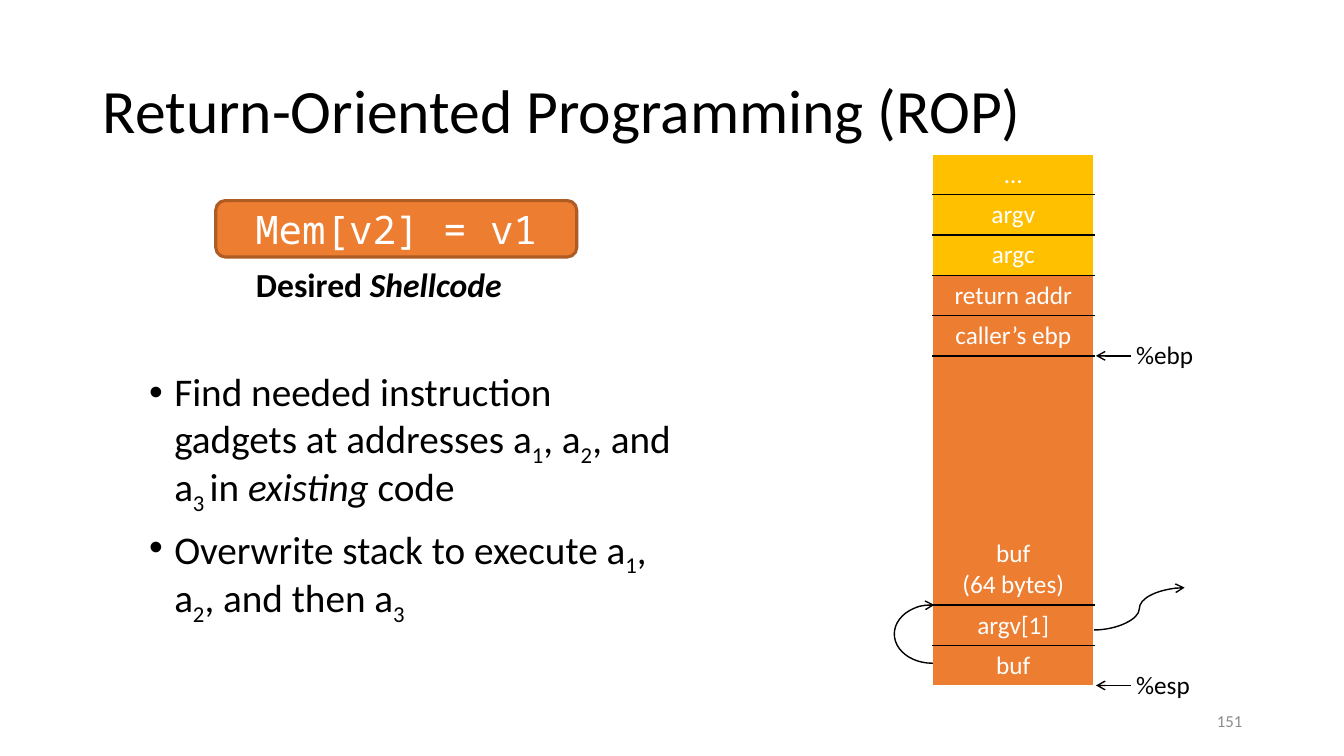
from pptx import Presentation
from pptx import util as u
from pptx.dml.color import RGBColor
from pptx.enum import shapes, text
from pptx.oxml import parse_xml
from pptx.oxml.ns import nsdecls, qn

COLORS = {
    "ink": "000000",
    "paper": "FFFFFF",
    "muted": "8C8C8C",
    "orange": "ED7D31",
    "orange_edge": "AF5C24",
    "gold": "FFC000",
}
SANS = "Calibri"
MONO = "Noto Sans Mono"
ALIGN = text.PP_ALIGN
ANCHOR = text.MSO_ANCHOR


def color(name):
    return RGBColor.from_string(COLORS[name])


def xml(tag, body=""):
    return parse_xml(f"<a:{tag} {nsdecls('a')}{body}")


def add_run(paragraph, words, size, ink="ink", font=SANS, bold=None, style=""):
    run = paragraph.add_run()
    run.text = words
    run.font.name = font
    run.font.size = u.Pt(size)
    run.font.color.rgb = color(ink)
    run.font.bold = bold
    if style == "italic":
        run.font.italic = True
    elif style == "sub":
        run._r.get_or_add_rPr().set("baseline", "-25000")


def add_box(parent, box, anchor=ANCHOR.TOP, wrap=True):
    frame = parent.add_textbox(*map(u.Inches, box)).text_frame
    frame.word_wrap = wrap
    frame.vertical_anchor = anchor
    return frame


def style_arrow(shape):
    shape.line.color.rgb = color("ink")
    shape.line.width = u.Pt(1)
    properties = shape._element.spPr
    properties.find(qn("a:ln")).append(xml("tailEnd", ' type="arrow"/>'))
    if properties.find(qn("a:effectLst")) is None:
        properties.append(xml("effectLst", "/>"))


def add_arrow(parent, kind, start, end):
    style_arrow(parent.add_connector(kind, *map(u.Inches, start + end)))


def add_title(slide, box):
    paragraph = add_box(slide.shapes, box, ANCHOR.MIDDLE).paragraphs[0]
    paragraph.line_spacing = 0.9
    add_run(paragraph, "Return-Oriented Programming (ROP)", 44)


def add_slide_number(slide, box):
    paragraph = add_box(slide.shapes, box, ANCHOR.MIDDLE).paragraphs[0]
    paragraph.alignment = ALIGN.RIGHT
    add_run(paragraph, "151", 12, "muted")


def add_shellcode(slide, box):
    left, top, width, height = box
    shape = slide.shapes.add_shape(
        shapes.MSO_SHAPE.ROUNDED_RECTANGLE, *map(u.Inches, box))
    shape.shadow.inherit = False
    shape.fill.solid()
    shape.fill.fore_color.rgb = color("orange")
    shape.line.color.rgb = color("orange_edge")
    shape.line.width = u.Pt(2.25)
    frame = shape.text_frame
    frame.vertical_anchor = ANCHOR.MIDDLE
    frame.paragraphs[0].alignment = ALIGN.CENTER
    add_run(frame.paragraphs[0], "Mem[v2] = v1", 28, "paper", MONO)

    caption_box = (left + 0.3, top + height + 0.02, 2.98, 0.5)
    caption = add_box(slide.shapes, caption_box, wrap=False).paragraphs[0]
    add_run(caption, "Desired ", 24, bold=True)
    add_run(caption, "Shellcode", 24, bold=True, style="italic")


def add_steps(slide, box):
    steps = [
        [("Find needed instruction gadgets at addresses a", ""), ("1", "sub"),
         (", a", ""), ("2", "sub"), (", and a", ""), ("3 ", "sub"),
         ("in ", ""), ("existing", "italic"), (" code", "")],
        [("Overwrite stack to execute a", ""), ("1", "sub"), (", a", ""),
         ("2", "sub"), (", and then a", ""), ("3", "sub")],
    ]
    frame = add_box(slide.shapes, box)
    for index, step in enumerate(steps):
        paragraph = frame.add_paragraph() if index else frame.paragraphs[0]
        properties = paragraph._p.get_or_add_pPr()
        properties.set("marL", str(u.Inches(0.25)))
        properties.set("indent", str(-u.Inches(0.25)))
        properties.append(xml("buFont", ' typeface="Arial"/>'))
        properties.append(xml("buChar", ' char="•"/>'))
        paragraph.line_spacing = 0.9
        if index:
            paragraph.space_before = u.Pt(10)
        for words, style in step:
            add_run(paragraph, words, 28, style=style)


def add_border(cell, side):
    line = xml(side, f' w="{u.Pt(1)}"><a:solidFill><a:srgbClr val="{COLORS["ink"]}"/>'
                     f'</a:solidFill></a:{side}>')
    cell._tc.get_or_add_tcPr().append(line)


def add_register(slide, label, left, middle):
    group = slide.shapes.add_group_shape().shapes
    frame = add_box(group, (left + 0.32, middle - 0.21, 0.82, 0.4), wrap=False)
    add_run(frame.paragraphs[0], label, 18)
    add_arrow(group, shapes.MSO_CONNECTOR.STRAIGHT,
              (left + 0.37, middle), (left + 0.02, middle))


def add_stack(slide, box):
    left, top, width, height = box
    right, bottom = left + width, top + height
    entries = ["…", "argv", "argc", "return addr", "caller’s ebp",
               "buf\n(64 bytes)", "argv[1]", "buf"]
    row_height, buffer_row = 0.4, 5
    buffer_height = height - row_height * (len(entries) - 1)
    table = slide.shapes.add_table(len(entries), 1, *map(u.Inches, box)).table
    table.first_row = table.horz_banding = False
    for index, entry in enumerate(entries):
        is_buffer = index == buffer_row
        table.rows[index].height = u.Inches(buffer_height if is_buffer else row_height)
        cell = table.cell(index, 0)
        if index:
            add_border(cell, "lnT")
        if index < len(entries) - 1:
            add_border(cell, "lnB")
        cell.fill.solid()
        cell.fill.fore_color.rgb = color("gold" if index < 3 else "orange")
        cell.vertical_anchor = ANCHOR.BOTTOM if is_buffer else ANCHOR.TOP
        for number, words in enumerate(entry.split("\n")):
            frame = cell.text_frame
            paragraph = frame.add_paragraph() if number else frame.paragraphs[0]
            paragraph.alignment = ALIGN.CENTER
            add_run(paragraph, words, 18, "paper")

    add_register(slide, "%ebp", right, top + buffer_row * row_height)
    add_register(slide, "%esp", right, bottom)

    loop = slide.shapes.add_shape(
        shapes.MSO_SHAPE.ARC,
        *map(u.Inches, (left - 0.38, bottom - 0.8, 0.75, 0.58)))
    loop.shadow.inherit = False
    loop.fill.background()
    for index, degrees in enumerate((88.43, 274.53)):
        loop.adjustments[index] = degrees * 0.6
    style_arrow(loop)
    add_arrow(slide.shapes, shapes.MSO_CONNECTOR.CURVE,
              (right, bottom - 0.55), (right + 0.9, bottom - 0.97))


def main():
    presentation = Presentation()
    presentation.slide_width = u.Inches(13.33)
    presentation.slide_height = u.Inches(7.5)
    slide = presentation.slides.add_slide(presentation.slide_layouts[6])
    add_title(slide, (0.92, 0.4, 11.5, 1.45))
    add_slide_number(slide, (9.42, 6.95, 3, 0.4))
    add_steps(slide, (1.38, 3.65, 5.42, 2.89))
    add_shellcode(slide, (2.14, 1.99, 3.58, 0.56))
    add_stack(slide, (9.25, 1.53, 1.6, 5.27))
    presentation.save("out.pptx")


if __name__ == "__main__":
    main()
